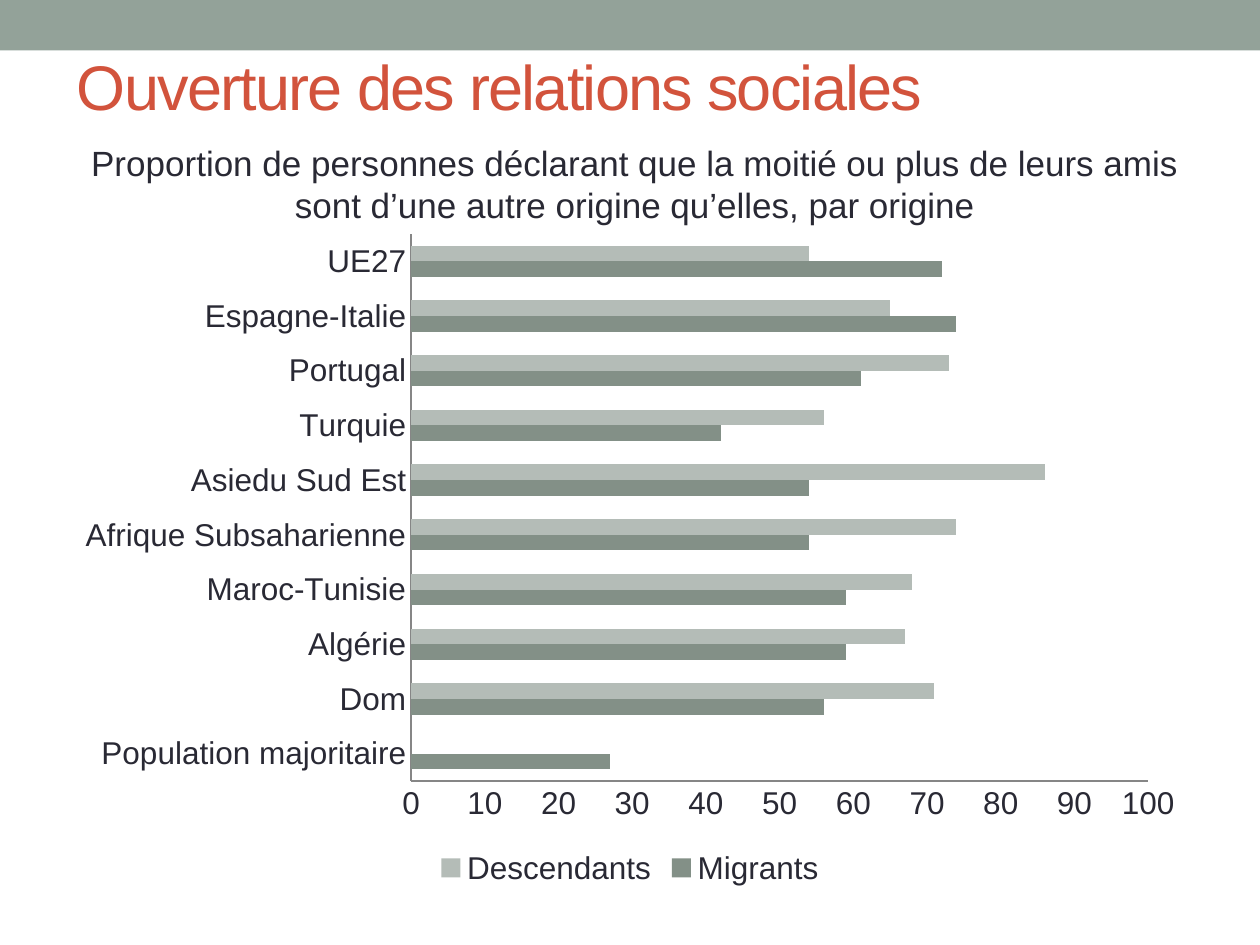
from typing import NamedTuple

from lxml import etree
from pptx import Presentation
from pptx.chart.data import CategoryChartData
from pptx.dml.color import RGBColor
from pptx.enum.chart import XL_CHART_TYPE, XL_LEGEND_POSITION, XL_TICK_MARK
from pptx.enum.shapes import MSO_SHAPE
from pptx.enum.text import MSO_ANCHOR, PP_ALIGN
from pptx.oxml.ns import qn
from pptx.util import Emu, Inches, Pt

BAR_CLUSTERED = XL_CHART_TYPE.BAR_CLUSTERED
LEGEND_BOTTOM = XL_LEGEND_POSITION.BOTTOM
NO_TICK = XL_TICK_MARK.NONE
RECTANGLE = MSO_SHAPE.RECTANGLE
MIDDLE, TOP = MSO_ANCHOR.MIDDLE, MSO_ANCHOR.TOP
LEFT, CENTER = PP_ALIGN.LEFT, PP_ALIGN.CENTER

FONT = "Arial"
SAGE = RGBColor(0x93, 0xA2, 0x99)
DARK_SAGE = RGBColor(0x83, 0x90, 0x87)
PALE_SAGE = RGBColor(0xB4, 0xBC, 0xB7)
AXIS_GREY = RGBColor(0x86, 0x86, 0x86)
RED = RGBColor(0xD2, 0x53, 0x3C)
INK = RGBColor(0x29, 0x29, 0x34)

SLIDE_WIDTH, SLIDE_HEIGHT = Inches(10), Inches(7.5)


class Area(NamedTuple):
    """A rectangle in shares of the slide's width and height."""
    left: float
    top: float
    width: float
    height: float

    def lengths(self) -> tuple[Emu, Emu, Emu, Emu]:
        return (Emu(round(self.left * SLIDE_WIDTH)), Emu(round(self.top * SLIDE_HEIGHT)),
                Emu(round(self.width * SLIDE_WIDTH)), Emu(round(self.height * SLIDE_HEIGHT)))


class Series(NamedTuple):
    name: str
    values: tuple
    color: RGBColor


BAND = Area(0, 0, 1, 0.0533)
TITLE = Area(0.051, 0.0587, 0.9, 0.0627)
SUBTITLE = Area(0.059, 0.1427, 0.89, 0.1173)
CHART = Area(0.05, 0.2333, 0.9, 0.7107)
PLOT = {"x": 0.307, "y": 0.02, "w": 0.65, "h": 0.815}  # shares of the chart

ORIGINS = ("Population majoritaire", "Dom", "Algérie", "Maroc-Tunisie",
           "Afrique Subsaharienne", "Asiedu Sud Est", "Turquie", "Portugal",
           "Espagne-Italie", "UE27")
SERIES = (
    Series("Migrants", (27, 56, 59, 59, 54, 54, 42, 61, 74, 72), DARK_SAGE),
    Series("Descendants", (None, 71, 67, 68, 74, 86, 56, 73, 65, 54), PALE_SAGE),
)


def style_font(font, size: float, color: RGBColor) -> None:
    font.name, font.size, font.bold = FONT, Pt(size), False
    font.color.rgb = color


def write_text(shape, text: str, size: float, color: RGBColor, align, anchor) -> None:
    frame = shape.text_frame
    frame.word_wrap = True
    frame.vertical_anchor = anchor
    para = frame.paragraphs[0]
    para.text = text
    para.alignment = align
    style_font(para.font, size, color)


def add_band(page) -> None:
    band = page.shapes.add_shape(RECTANGLE, *BAND.lengths())
    band.shadow.inherit = False
    band.fill.solid()
    band.fill.fore_color.rgb = SAGE
    band.line.fill.background()


def add_title(page, text: str) -> None:
    title = page.shapes.title
    title.left, title.top, title.width, title.height = TITLE.lengths()
    write_text(title, text, 36, RED, LEFT, MIDDLE)
    span = title.text_frame.paragraphs[0].runs[0]
    span.font._element.set("spc", "-100")


def place_plot(chart) -> None:
    """Fix the inner plot area within the chart."""
    plot_area = chart._chartSpace.chart.plotArea
    for old in plot_area.findall(qn("c:layout")):
        plot_area.remove(old)
    layout = etree.Element(qn("c:layout"))
    manual = etree.SubElement(layout, qn("c:manualLayout"))
    settings = {"layoutTarget": "inner", "xMode": "edge", "yMode": "edge", **PLOT}
    for name, value in settings.items():
        etree.SubElement(manual, qn(f"c:{name}")).set("val", str(value))
    plot_area.insert(0, layout)


def add_friends_chart(page) -> None:
    data = CategoryChartData()
    data.categories = ORIGINS
    for series in SERIES:
        data.add_series(series.name, series.values)
    chart = page.shapes.add_chart(BAR_CLUSTERED, *CHART.lengths(), data).chart
    chart.has_title = False
    style_font(chart.font, 18, INK)
    place_plot(chart)

    # Bars
    plot = chart.plots[0]
    plot.gap_width, plot.overlap, plot.vary_by_categories = 150, 0, False
    for bars, series in zip(plot.series, SERIES):
        bars.format.fill.solid()
        bars.format.fill.fore_color.rgb = series.color

    # Axes
    for axis in (chart.category_axis, chart.value_axis):
        axis.has_major_gridlines = False
        axis.major_tick_mark = axis.minor_tick_mark = NO_TICK
        axis.format.line.color.rgb = AXIS_GREY
        axis.format.line.width = Pt(0.75)
    scale = chart.value_axis
    scale.minimum_scale, scale.maximum_scale, scale.major_unit = 0, 100, 10

    # Legend
    chart.has_legend = True
    chart.legend.position = LEGEND_BOTTOM
    chart.legend.include_in_layout = False


def main() -> None:
    deck = Presentation()
    deck.slide_width, deck.slide_height = SLIDE_WIDTH, SLIDE_HEIGHT
    page = deck.slides.add_slide(deck.slide_layouts[5])

    add_band(page)
    add_title(page, "Ouverture des relations sociales")
    subtitle = page.shapes.add_textbox(*SUBTITLE.lengths())
    write_text(subtitle, "Proportion de personnes déclarant que la moitié ou plus de leurs amis "
               "sont d’une autre origine qu’elles, par origine", 20, INK, CENTER, TOP)
    add_friends_chart(page)

    deck.save("out.pptx")


if __name__ == "__main__":
    main()
